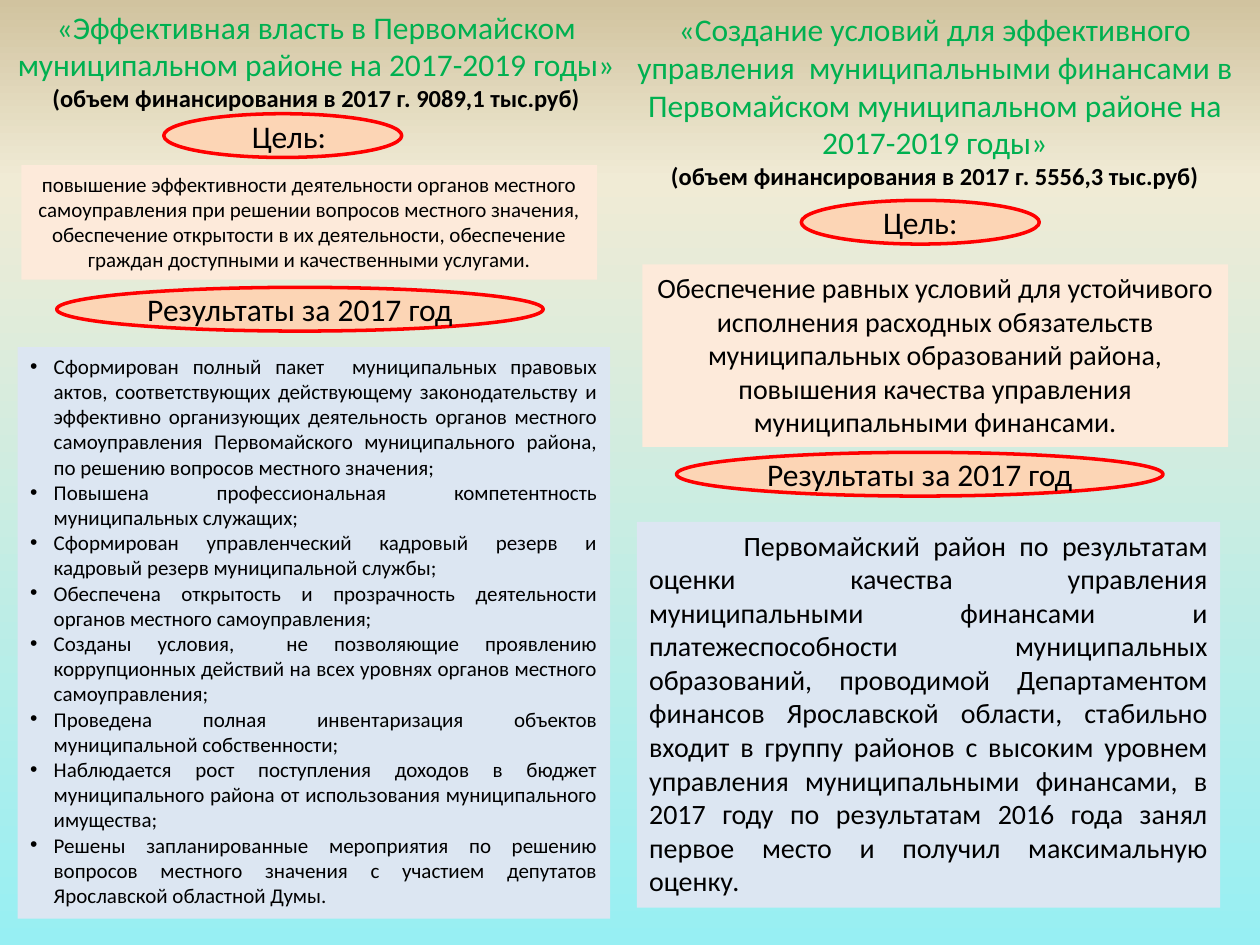
from copy import deepcopy

from lxml.etree import SubElement
from pptx import Presentation
from pptx.dml.color import RGBColor
from pptx.enum.shapes import MSO_SHAPE
from pptx.enum.text import MSO_ANCHOR, MSO_AUTO_SIZE, PP_ALIGN
from pptx.oxml.ns import qn
from pptx.util import Pt

THEME = {
    "font": "Calibri",
    "text": "000000", "heading": "00B050", "outline": "558ED5",
    "goal": "FDEADA", "result": "DCE6F2", "label": "FCD5B5", "label_line": "FF0000",
    "background": [(0, "97EFF3"), (0.81, "F0EBD5"), (1, "D1C39F")],
    "large": 18, "medium": 16, "note": 14, "small": 12,
}
GOAL_LABEL, RESULT_LABEL = "Цель:", "Результаты за 2017 год"
GOAL_SIZE, RESULT_SIZE = (136, 25), (278, 25)

HEADINGS = [
    ("«Эффективная власть в Первомайском муниципальном районе на 2017-2019 годы»",
     "(объем финансирования в 2017 г. 9089,1 тыс.руб)", (0.75, 0.75, 360, 68)),
    ("«Создание условий для эффективного управления  муниципальными финансами в "
     "Первомайском муниципальном районе на 2017-2019 годы»",
     "(объем финансирования в 2017 г. 5556,3 тыс.руб)", (354.25, 2.15, 360, 112)),
]
GOALS = [
    ("повышение эффективности деятельности органов местного самоуправления при решении "
     "вопросов местного значения, обеспечение открытости в их деятельности, обеспечение "
     "граждан доступными и качественными услугами.", "small", (12.25, 94.3, 329, 65.5)),
    ("Обеспечение равных условий для устойчивого исполнения расходных обязательств "
     "муниципальных образований района, повышения качества управления муниципальными "
     "финансами.", "medium", (367, 151, 334.8, 104.4)),
]
LABELS = [
    ("", (93.6, 65), GOAL_SIZE),
    (GOAL_LABEL, (457.9, 114.5), GOAL_SIZE),
    (RESULT_LABEL, (32.4, 164.2), RESULT_SIZE),
    (RESULT_LABEL, (386.6, 258.5), RESULT_SIZE),
]
GOAL_CAPTION_BOX = (136.8, 63.4, 57.6, 28.8)
RESULTS = [
    "Сформирован полный пакет  муниципальных правовых актов, соответствующих действующему "
    "законодательству и эффективно организующих деятельность органов местного "
    "самоуправления Первомайского муниципального района, по решению вопросов местного "
    "значения;",
    "Повышена профессиональная компетентность муниципальных служащих;",
    "Сформирован управленческий кадровый резерв и кадровый резерв муниципальной службы;",
    "Обеспечена открытость и прозрачность деятельности органов местного самоуправления;",
    "Созданы условия,  не позволяющие проявлению коррупционных действий на всех уровнях "
    "органов местного самоуправления;",
    "Проведена полная инвентаризация объектов муниципальной собственности;",
    "Наблюдается рост поступления доходов в бюджет муниципального района от использования "
    "муниципального имущества;",
    "Решены запланированные мероприятия по решению вопросов местного значения с участием "
    "депутатов Ярославской областной Думы.",
]
RESULTS_BOX = (10, 198.3, 338.6, 326.6)
RATING = (
    "Первомайский район по результатам оценки качества управления муниципальными "
    "финансами и платежеспособности муниципальных образований, проводимой Департаментом "
    "финансов Ярославской области, стабильно входит в группу районов с высоким уровнем "
    "управления муниципальными финансами, в 2017 году по результатам 2016 года занял "
    "первое место и получил максимальную оценку."
)
RATING_BOX = (363.9, 298.2, 333.4, 220.5)


def color(name):
    return RGBColor.from_string(THEME[name])


def set_format(obj, **values):
    for name, value in values.items():
        setattr(obj, name, value)


def place(sp, box):
    set_format(sp, **dict(zip(("left", "top", "width", "height"), map(Pt, box))))
    return sp


def add_panel(s, kind, box, fill):
    sp = s.shapes.add_shape(kind, *map(Pt, box))
    sp.shadow.inherit = False
    sp.fill.solid()
    sp.fill.fore_color.rgb = color(fill)
    sp.line.fill.background()
    return sp


def write(sp, texts, size, align=PP_ALIGN.CENTER, anchor=MSO_ANCHOR.TOP, wrap=True):
    tf = sp.text_frame
    set_format(tf, word_wrap=wrap, vertical_anchor=anchor, auto_size=MSO_AUTO_SIZE.NONE)
    for i, text in enumerate(texts):
        p = tf.add_paragraph() if i else tf.paragraphs[0]
        set_format(p, alignment=align, space_before=Pt(0))
        r = p.add_run()
        r.text = text
        set_format(r.font, name=THEME["font"], size=Pt(THEME[size]))
        r.font.color.rgb = color("text")
    return tf.paragraphs


def write_heading(sp, title, funding):
    name, note = write(sp, (title, funding), "large")
    r = name.runs[0]
    r.font.color.rgb = color("heading")
    rpr = r.font._element if hasattr(r.font, "_element") else r._r.get_or_add_rPr()
    ln = SubElement(rpr, qn("a:ln"), w=str(Pt(0.75)))
    fill = SubElement(ln, qn("a:solidFill"))
    SubElement(fill, qn("a:srgbClr"), val=THEME["outline"])
    rpr.insert(0, ln)
    set_format(note.runs[0].font, size=Pt(THEME["note"]), bold=True)


def set_background(s):
    fill = s.background.fill
    fill.gradient()
    fill.gradient_angle = 90
    stops = s.element.find(".//" + qn("a:gsLst"))
    stops.append(deepcopy(stops[0]))
    for stop, (position, rgb) in zip(fill.gradient_stops, THEME["background"]):
        stop.position = position
        stop.color.rgb = RGBColor.from_string(rgb)


def main():
    prs = Presentation()
    set_format(prs, slide_width=Pt(720), slide_height=Pt(540))
    s = prs.slides.add_slide(prs.slide_layouts[1])
    set_background(s)

    heading_shapes = (s.shapes.title, s.shapes.add_textbox(0, 0, 0, 0))
    for sp, (title, funding, box) in zip(heading_shapes, HEADINGS):
        write_heading(place(sp, box), title, funding)

    for text, size, box in GOALS:
        write(add_panel(s, MSO_SHAPE.RECTANGLE, box, "goal"), [text], size)

    body = place(s.placeholders[1], RESULTS_BOX)
    body.fill.solid()
    body.fill.fore_color.rgb = color("result")
    for p in write(body, RESULTS, "small", PP_ALIGN.JUSTIFY):
        ppr = p._p.get_or_add_pPr()
        ppr.set("marL", str(Pt(13.5)))
        ppr.set("indent", str(-Pt(13.5)))
        SubElement(ppr, qn("a:buChar"), char="•")

    rating = add_panel(s, MSO_SHAPE.RECTANGLE, RATING_BOX, "result")
    p = write(rating, [RATING], "medium", PP_ALIGN.JUSTIFY)[0]
    p._p.get_or_add_pPr().set("indent", str(Pt(54)))

    for text, position, size in LABELS:
        sp = add_panel(s, MSO_SHAPE.OVAL, position + size, "label")
        sp.line.color.rgb = color("label_line")
        sp.line.width = Pt(2)
        if text:
            write(sp, [text], "large", anchor=MSO_ANCHOR.MIDDLE)

    caption = s.shapes.add_textbox(*map(Pt, GOAL_CAPTION_BOX))
    write(caption, [GOAL_LABEL], "large", PP_ALIGN.LEFT, wrap=False)

    prs.save("out.pptx")


if __name__ == "__main__":
    main()
